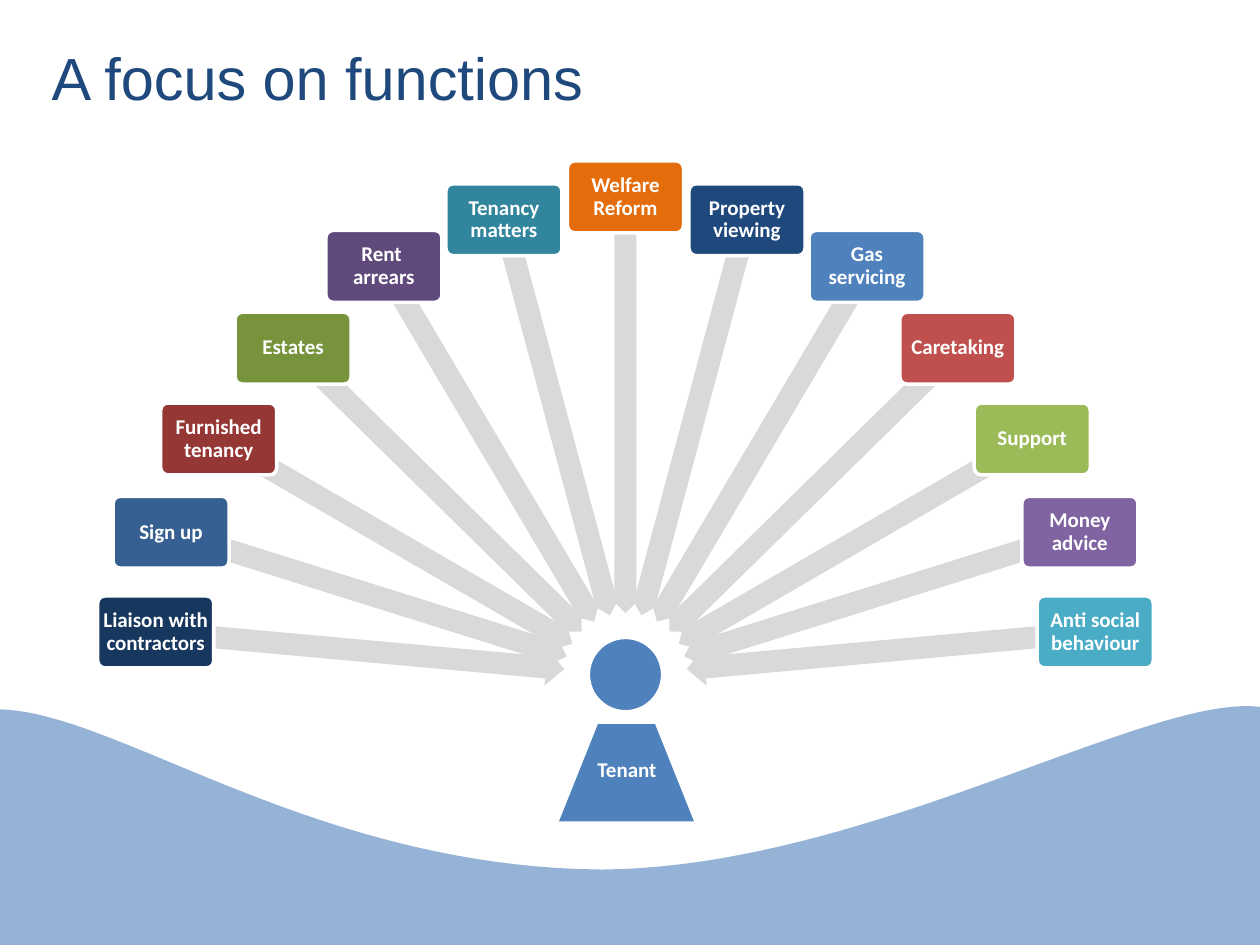
from dataclasses import dataclass
from math import atan2, cos, degrees, hypot, radians, sin

from pptx import Presentation
from pptx.dml.color import RGBColor
from pptx.enum.shapes import MSO_SHAPE
from pptx.enum.text import MSO_ANCHOR, MSO_AUTO_SIZE, PP_ALIGN
from pptx.util import Cm, Pt


@dataclass(frozen=True)
class Theme:
    wave: str = "95B3D7"
    title: str = "1F497D"
    tenant: str = "4F81BD"
    arrow: str = "D9D9D9"
    white: str = "FFFFFF"
    title_font: str = "Arial"
    label_font: str = "Calibri"
    title_size: int = 34
    label_size: int = 12
    outline: int = 2


THEME = Theme()

HUB_X, HUB_Y = 12.61, 13.6
HUB_GAP = 1.24
CARD_WIDTH, CARD_HEIGHT = 2.34, 1.45
ARROW_HEIGHT = 0.74

FAN_SIDE = [(9.47, 0.86), (9.16, 2.87), (8.2, 4.75), (6.7, 6.58), (4.87, 8.23), (2.45, 9.17)]
FAN_OFFSETS = [(-across, up) for across, up in FAN_SIDE] + [(0, 9.63)] + FAN_SIDE[::-1]

FUNCTIONS = [
    ("Liaison with contractors", "17375E"),
    ("Sign up", "376092"),
    ("Furnished tenancy", "953735"),
    ("Estates", "77933C"),
    ("Rent \narrears", "604A7B"),
    ("Tenancy matters", "31859C"),
    ("Welfare Reform", "E46C0A"),
    ("Property viewing", "1F497D"),
    ("Gas servicing", "4F81BD"),
    ("Caretaking", "C0504D"),
    ("Support", "9BBB59"),
    ("Money advice", "8064A2"),
    ("Anti social behaviour", "4BACC6"),
]

WAVE_START = (-0.03, 14.3)
WAVE_CURVES = [
    ((2.34, 14.33), (6.3, 17.48), (12.12, 17.53)),
    ((17.45, 17.5), (23.16, 13.97), (25.4, 14.25)),
]
WAVE_STEPS = 40


def paint(shape, color, outlined=False):
    shape.shadow.inherit = False
    shape.fill.solid()
    shape.fill.fore_color.rgb = RGBColor.from_string(color)
    if outlined:
        shape.line.color.rgb = RGBColor.from_string(THEME.white)
        shape.line.width = Pt(THEME.outline)
    else:
        shape.line.fill.background()


def add_centred_shape(page, kind, center_x, center_y, width, height, color, outlined=False):
    shape = page.shapes.add_shape(
        kind, Cm(center_x - width / 2), Cm(center_y - height / 2), Cm(width), Cm(height)
    )
    paint(shape, color, outlined)
    return shape


def set_margins(frame, left, top, right, bottom):
    frame.margin_left, frame.margin_top = Cm(left), Cm(top)
    frame.margin_right, frame.margin_bottom = Cm(right), Cm(bottom)


def add_span(para, text, font_name, size, color, bold=False):
    span = para.add_run()
    span.text = text
    span.font.name = font_name
    span.font.size = Pt(size)
    span.font.bold = bold
    span.font.color.rgb = RGBColor.from_string(color)


def write_label(box, text, margin=0):
    frame = box.text_frame
    frame.word_wrap = True
    frame.vertical_anchor = MSO_ANCHOR.MIDDLE
    set_margins(frame, margin, margin, margin, margin)
    para = frame.paragraphs[0]
    para.alignment = PP_ALIGN.CENTER
    para.line_spacing = 0.9
    para.space_after = Pt(4.2)
    for index, line in enumerate(text.split("\n")):
        if index:
            para.add_line_break()
        add_span(para, line, THEME.label_font, THEME.label_size, THEME.white, bold=True)


def write_title(page, text):
    box = page.shapes.title
    box.left, box.top, box.width, box.height = Cm(0.84), Cm(1.04), Cm(18), Cm(0.81)
    frame = box.text_frame
    frame.word_wrap = True
    frame.auto_size = MSO_AUTO_SIZE.NONE
    frame.vertical_anchor = MSO_ANCHOR.TOP
    set_margins(frame, 0.2, 0, 0.5, 0)
    para = frame.paragraphs[0]
    para.alignment = PP_ALIGN.LEFT
    para.line_spacing = 0.85
    para.space_after = Pt(3)
    add_span(para, text, THEME.title_font, THEME.title_size, THEME.title)


def curve_point(points, t):
    weights = ((1 - t) ** 3, 3 * t * (1 - t) ** 2, 3 * t**2 * (1 - t), t**3)
    return tuple(
        Cm(sum(weight * point[axis] for weight, point in zip(weights, points)))
        for axis in (0, 1)
    )


def add_wave(page):
    builder = page.shapes.build_freeform(Cm(WAVE_START[0]), Cm(WAVE_START[1]))
    start = WAVE_START
    outline = []
    for curve in WAVE_CURVES:
        points = (start, *curve)
        outline += [curve_point(points, step / WAVE_STEPS) for step in range(1, WAVE_STEPS + 1)]
        start = curve[-1]
    outline += [(Cm(25.4), Cm(19.05)), (Cm(0), Cm(19.05))]
    builder.add_line_segments(outline, close=True)
    paint(builder.convert_to_shape(), THEME.wave)


def add_function(page, text, color, across, up):
    angle = atan2(up, across)
    reach = hypot(across, up)
    middle = (reach + HUB_GAP) / 2
    arrow = add_centred_shape(
        page, MSO_SHAPE.LEFT_ARROW,
        HUB_X + middle * cos(angle), HUB_Y - middle * sin(angle),
        reach - HUB_GAP, ARROW_HEIGHT, THEME.arrow,
    )
    arrow.adjustments[0] = 0.6
    arrow.adjustments[1] = 0.5
    arrow.rotation = 360 - degrees(angle)

    card = add_centred_shape(
        page, MSO_SHAPE.ROUNDED_RECTANGLE, HUB_X + across, HUB_Y - up,
        CARD_WIDTH, CARD_HEIGHT, color, outlined=True,
    )
    card.adjustments[0] = 0.1
    write_label(card, text)


def add_tenant(page):
    body = add_centred_shape(
        page, MSO_SHAPE.TRAPEZOID, 12.63, 15.58, 2.72, 1.96, THEME.tenant
    )
    body.adjustments[0] = 0.4
    box = page.shapes.add_textbox(Cm(11.56), Cm(14.68), Cm(2.16), Cm(1.7))
    write_label(box, "Tenant", margin=0.05)


def main():
    deck = Presentation()
    deck.slide_width, deck.slide_height = Cm(25.4), Cm(19.05)
    page = deck.slides.add_slide(deck.slide_layouts[5])
    add_wave(page)
    write_title(page, "A focus on functions")
    add_centred_shape(
        page, MSO_SHAPE.OVAL, HUB_X, HUB_Y, 1.5, 1.5, THEME.tenant, outlined=True
    )
    for (text, color), (across, up) in zip(FUNCTIONS, FAN_OFFSETS):
        add_function(page, text, color, across, up)
    add_tenant(page)
    deck.save("out.pptx")


if __name__ == "__main__":
    main()
